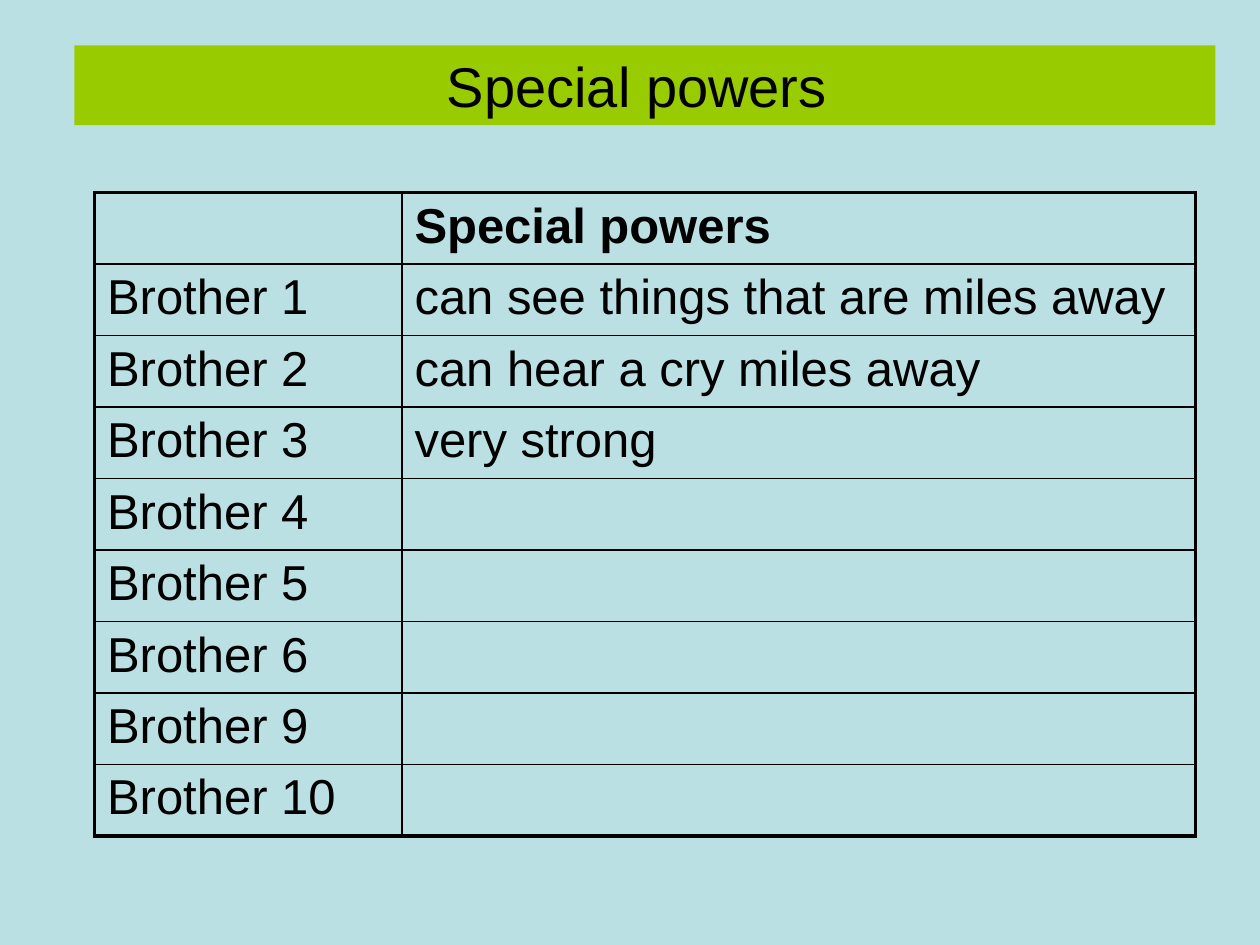
from lxml import etree
from pptx import Presentation
from pptx import util as u
from pptx.dml.color import RGBColor
from pptx.enum import shapes, text
from pptx.oxml.ns import qn

BLACK, GREEN, PALE_BLUE = "000000", "99CC00", "BBE0E3"
TITLE = "Special powers "
HEADER = ("", "Special powers")
BROTHERS = [
    ("Brother 1", "can see things that are miles away"),
    ("Brother 2", "can hear a cry miles away"),
    ("Brother 3", "very strong"),
    ("Brother 4", ""),
    ("Brother 5", ""),
    ("Brother 6", ""),
    ("Brother 9", ""),
    ("Brother 10", ""),
]
COLUMN_WIDTHS = (175.7, 453.6)
ROW_HEIGHT = 40.85
THIN, THICK = 1, 2.25


def paint(fill, color):
    fill.solid()
    fill.fore_color.rgb = RGBColor.from_string(color)


def write(frame, words, size, bold=False, align=text.PP_ALIGN.LEFT, before=0):
    """Write one paragraph; before is a percentage of the line height."""
    paragraph = frame.paragraphs[0]
    paragraph.alignment = align
    if before:
        spacing = etree.SubElement(paragraph._p.get_or_add_pPr(), qn("a:spcBef"))
        etree.SubElement(spacing, qn("a:spcPct"), val=str(before * 1000))
    run = paragraph.add_run()
    run.text = words
    run.font.name, run.font.size, run.font.bold = "Arial", u.Pt(size), bold
    run.font.color.rgb = RGBColor.from_string(BLACK)


def add_borders(cell, widths):
    """Widths run left, right, top, bottom; borders precede the cell's fill."""
    properties = cell._tc.get_or_add_tcPr()
    for position, (side, width) in enumerate(zip("LRTB", widths)):
        line = etree.Element(qn(f"a:ln{side}"), w=str(u.Pt(width)))
        fill = etree.SubElement(line, qn("a:solidFill"))
        etree.SubElement(fill, qn("a:srgbClr"), val=BLACK)
        properties.insert(position, line)


deck = Presentation()
deck.slide_width, deck.slide_height = u.Pt(720), u.Pt(540)
slide = deck.slides.add_slide(deck.slide_layouts[6])
paint(slide.background.fill, PALE_BLUE)

# Title band
band = slide.shapes.add_shape(shapes.MSO_SHAPE.RECTANGLE,
                              u.Pt(42.5), u.Pt(26), u.Pt(652), u.Pt(45.5))
band.shadow.inherit = False
paint(band.fill, GREEN)
band.line.fill.background()
band.text_frame.word_wrap = True
band.text_frame.vertical_anchor = text.MSO_ANCHOR.TOP
write(band.text_frame, TITLE, 32, align=text.PP_ALIGN.CENTER)

# Table of brothers and their powers
rows = [HEADER] + BROTHERS
last_row, last_column = len(rows) - 1, len(HEADER) - 1
powers = slide.shapes.add_table(
    len(rows), len(HEADER), u.Pt(54), u.Pt(110),
    u.Pt(sum(COLUMN_WIDTHS)), u.Pt(ROW_HEIGHT * len(rows))).table
powers.first_row = powers.horz_banding = False
for column, width in zip(powers.columns, COLUMN_WIDTHS):
    column.width = u.Pt(width)

for r, row in enumerate(rows):
    powers.rows[r].height = u.Pt(ROW_HEIGHT)
    for c, words in enumerate(row):
        cell = powers.cell(r, c)
        cell.fill.background()
        outer_edges = (c == 0, c == last_column, r == 0, r == last_row)
        add_borders(cell, [THICK if outer else THIN for outer in outer_edges])
        if words:
            write(cell.text_frame, words, 28, bold=r == 0, before=20)

deck.save("out.pptx")
